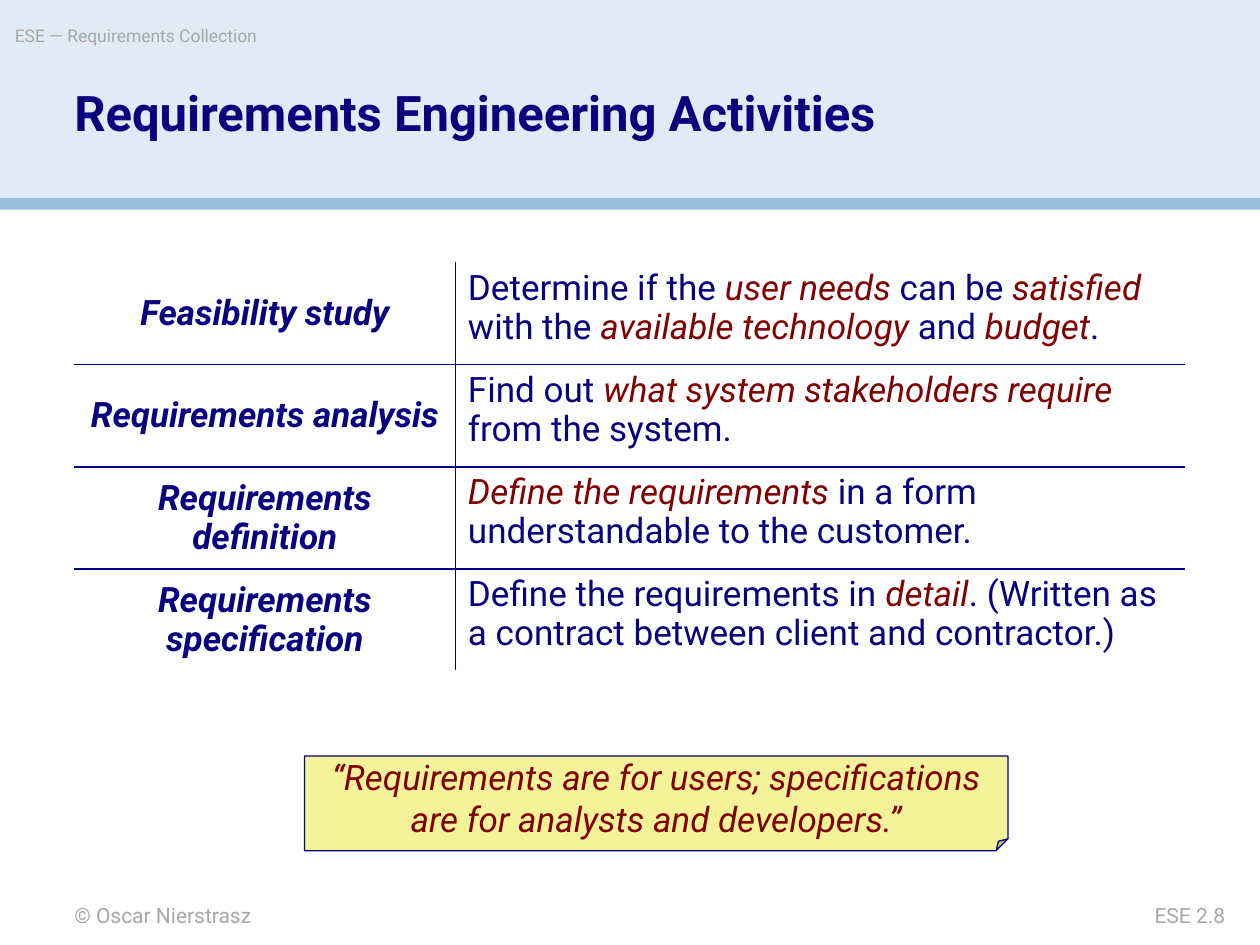
from dataclasses import dataclass
from typing import Any

from lxml import etree
from pptx import Presentation
from pptx import util as u
from pptx.dml.color import RGBColor
from pptx.enum import shapes, text
from pptx.oxml import ns

ACTIVITIES = [
    ("Feasibility study",
     "Determine if the *user needs* can be *satisfied* with the "
     "*available technology* and *budget*."),
    ("Requirements analysis",
     "Find out *what system stakeholders require* from the system."),
    ("Requirements definition",
     "*Define the requirements* in a form understandable to the customer."),
    ("Requirements specification",
     "Define the requirements in *detail*. (Written as a contract between "
     "client and contractor.)"),
]
QUOTE = ("“Requirements are for users; specifications "
         "are for analysts and developers.”")


def colour(code):
    return RGBColor.from_string(code)


def add_border(cell, side, code):
    """Draw a 1 pt line on one side (L, R, T or B) of a table cell."""
    properties = cell._tc.get_or_add_tcPr()
    line = etree.SubElement(properties, ns.qn(f"a:ln{side}"), w=str(u.Pt(1)))
    fill = etree.SubElement(line, ns.qn("a:solidFill"))
    etree.SubElement(fill, ns.qn("a:srgbClr"), val=code)


def fold_corner(box, share):
    """Set the fold size, for which python-pptx lists no adjustment."""
    geometry = box._element.spPr.find(ns.qn("a:prstGeom"))
    geometry.set("prst", "foldedCorner")
    for guides in geometry.findall(ns.qn("a:avLst")):
        geometry.remove(guides)
    guides = etree.SubElement(geometry, ns.qn("a:avLst"))
    etree.SubElement(guides, ns.qn("a:gd"), name="adj",
                     fmla=f"val {round(share * 100000)}")


@dataclass
class Slide:
    page: Any
    font: str = "Roboto"
    navy: str = "0A017F"
    red: str = "7F0101"
    grey: str = "A7A7A7"
    rule: str = "00027F"

    def format(self, span, size, code, bold=False, italic=False):
        span.font.name = self.font
        span.font.size = u.Pt(size)
        span.font.color.rgb = colour(code)
        span.font.bold = bold
        span.font.italic = italic

    def shape(self, kind, left, top, width, height, fill, line=None):
        box = self.page.shapes.add_shape(
            kind, u.Cm(left), u.Cm(top), u.Cm(width), u.Cm(height))
        box.shadow.inherit = False
        box.fill.solid()
        box.fill.fore_color.rgb = colour(fill)
        if line:
            box.line.color.rgb = colour(line)
            box.line.width = u.Pt(0.75)
        else:
            box.line.fill.background()
        return box

    def label(self, words, left, top, width, height, size, code,
              bold=False, align=text.PP_ALIGN.LEFT, spacing=1.0):
        box = self.page.shapes.add_textbox(
            u.Cm(left), u.Cm(top), u.Cm(width), u.Cm(height))
        frame = box.text_frame
        frame.word_wrap = True
        frame.margin_left = frame.margin_right = 0
        frame.margin_top = frame.margin_bottom = 0
        frame.text = words
        para = frame.paragraphs[0]
        para.alignment = align
        para.line_spacing = spacing
        self.format(para.runs[0], size, code, bold)

    def note(self, words, left, top, width, height):
        box = self.shape(shapes.MSO_SHAPE.FOLDED_CORNER, left, top, width,
                         height, "F5F399", "05027D")
        fold_corner(box, 0.125)
        frame = box.text_frame
        frame.word_wrap = True
        frame.vertical_anchor = text.MSO_ANCHOR.MIDDLE
        frame.text = words
        para = frame.paragraphs[0]
        para.alignment = text.PP_ALIGN.CENTER
        self.format(para.runs[0], 20, self.red, italic=True)

    def table(self, rows, left, top, widths, row_height):
        """Two-column table ruled inside only; *words* in stars are stressed."""
        table = self.page.shapes.add_table(
            len(rows), len(widths), u.Cm(left), u.Cm(top),
            u.Cm(sum(widths)), u.Cm(row_height * len(rows))).table
        table.first_row = table.horz_banding = False
        for column, width in zip(table.columns, widths):
            column.width = u.Cm(width)
        for index, (name, description) in enumerate(rows):
            table.rows[index].height = u.Cm(row_height)
            name_cell, description_cell = table.rows[index].cells
            for cell, side in ((name_cell, "R"), (description_cell, "L")):
                add_border(cell, side, self.rule)
                if index > 0:
                    add_border(cell, "T", self.rule)
                if index < len(rows) - 1:
                    add_border(cell, "B", self.rule)
                cell.fill.background()
                cell.text_frame.paragraphs[0].line_spacing = 0.95

            name_cell.vertical_anchor = text.MSO_ANCHOR.MIDDLE
            para = name_cell.text_frame.paragraphs[0]
            para.text = name
            para.alignment = text.PP_ALIGN.CENTER
            self.format(para.runs[0], 20, self.navy, bold=True, italic=True)

            para = description_cell.text_frame.paragraphs[0]
            for part, words in enumerate(description.split("*")):
                if words:
                    stressed = part % 2 == 1
                    span = para.add_run()
                    span.text = words
                    self.format(span, 20, self.red if stressed else self.navy,
                                italic=stressed)


def main():
    deck = Presentation()
    deck.slide_width, deck.slide_height = u.Cm(25.4), u.Cm(19.05)
    slide = Slide(deck.slides.add_slide(deck.slide_layouts[6]))

    rectangle = shapes.MSO_SHAPE.RECTANGLE
    slide.shape(rectangle, 0, 0, 25.4, 4, "E1EBF5")
    slide.shape(rectangle, 0, 3.99, 25.4, 0.24, "9CBDDE")
    slide.label("© Oscar Nierstrasz", 1.5, 18.2, 10.6, 0.5, 12, slide.grey)
    slide.label("ESE — Requirements Collection", 0.3, 0.5, 15, 0.7, 10,
                slide.grey)
    slide.label("ESE 2.8", 20.95, 18.2, 3.75, 0.5, 12, slide.grey,
                align=text.PP_ALIGN.RIGHT)
    slide.label("Requirements Engineering Activities", 1.5, 1.8, 18.4, 2.25,
                28, slide.navy, bold=True, spacing=0.9)
    slide.table(ACTIVITIES, 1.5, 5.29, (7.68, 14.7), 2.06)
    slide.note(QUOTE, 6.14, 15.24, 14.18, 1.91)

    deck.save("out.pptx")


if __name__ == "__main__":
    main()
